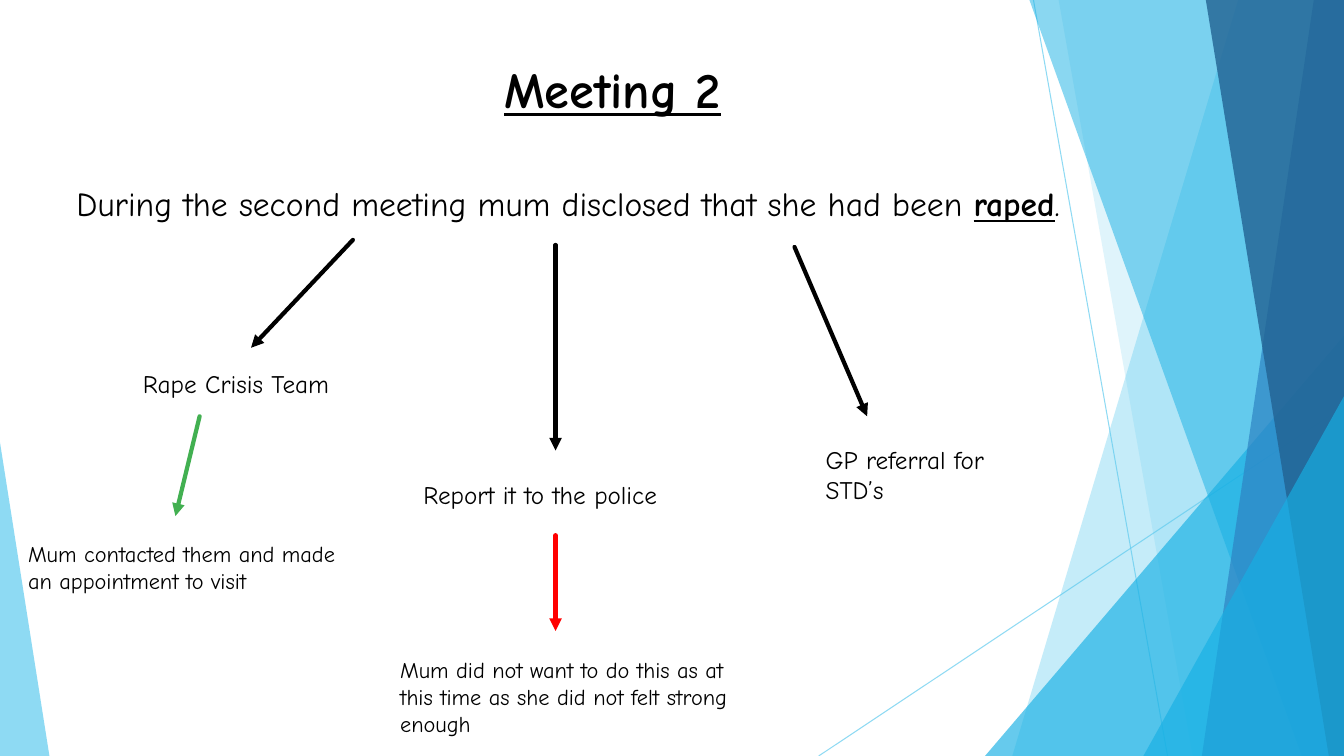
import pptx
import pptx.util
import pptx.dml.color
import pptx.enum.dml
import pptx.enum.shapes
import pptx.enum.text
import pptx.oxml
import pptx.oxml.ns
from dataclasses import dataclass

PX = 9144  # EMU in one px, 100 px to the inch
WIDTH, HEIGHT = 1333, 750


@dataclass(frozen=True)
class Theme:
    font: str = "Comic Neue"
    text: str = "000000"
    helped: str = "42B051"
    declined: str = "FF0000"
    sky: str = "5FCBEF"
    cyan: str = "17B0E4"
    blue: str = "2E83C3"
    navy: str = "226292"
    title_size: int = 36
    lead_size: int = 24
    label_size: int = 18
    outcome_size: int = 16
    arrow_width: float = 3
    hairline_width: float = 0.75


THEME = Theme()


def emu(*lengths):
    return [pptx.util.Emu(length * PX) for length in lengths]


def rgb(colour):
    return pptx.dml.color.RGBColor.from_string(colour)


def add_child(parent, tag, **attributes):
    child = pptx.oxml.parse_xml(f"<{tag} {pptx.oxml.ns.nsdecls('a')}/>")
    for name, value in attributes.items():
        child.set(name, value)
    parent.append(child)


def set_opacity(element, percent):
    for colour in element.iter(pptx.oxml.ns.qn("a:srgbClr")):
        add_child(colour, "a:alpha", val=str(percent * 1000))


def paint(shape, colour, opacity):
    shape.shadow.inherit = False
    shape.fill.solid()
    shape.fill.fore_color.rgb = rgb(colour)
    set_opacity(shape._element.spPr, opacity)
    shape.line.fill.background()


def add_line(shapes, start, end, colour, width):
    line = shapes.add_connector(
        pptx.enum.shapes.MSO_CONNECTOR.STRAIGHT, *emu(*start, *end))
    line.line.color.rgb = rgb(colour)
    line.line.width = pptx.util.Pt(width)
    add_child(line._element.spPr, "a:effectLst")
    return line


def add_arrow(slide, start, end, colour):
    arrow = add_line(slide.shapes, start, end, colour, THEME.arrow_width)
    outline = arrow.line._get_or_add_ln()
    outline.set("cap", "rnd")
    add_child(outline, "a:tailEnd", type="triangle")


def set_font(paragraph, size):
    paragraph.font.name = THEME.font
    paragraph.font.size = pptx.util.Pt(size)
    paragraph.font.color.rgb = rgb(THEME.text)


def add_text(slide, box, text, size):
    shape = slide.shapes.add_textbox(*emu(*box))
    shape.text_frame.word_wrap = True
    shape.text_frame.auto_size = pptx.enum.text.MSO_AUTO_SIZE.SHAPE_TO_FIT_TEXT
    paragraph = shape.text_frame.paragraphs[0]
    paragraph.text = text
    set_font(paragraph, size)
    return paragraph


def draw_backdrop(slide, box):
    """Overlapping translucent facets along the right edge and lower left corner."""
    left, top, width, height = box
    right, bottom = left + width, top + height
    shapes = slide.shapes.add_group_shape().shapes

    def add_facet(top_x, bottom_x, colour, opacity):
        builder = shapes.build_freeform(*emu(left + top_x, top))
        builder.add_line_segments([
            emu(right, top), emu(right, bottom), emu(left + bottom_x, bottom)])
        paint(builder.convert_to_shape(), colour, opacity)

    def add_corner(x, y, corner_width, apex, colour, opacity):
        triangle = shapes.add_shape(
            pptx.enum.shapes.MSO_SHAPE.ISOSCELES_TRIANGLE,
            *emu(left + x, top + y, corner_width, height - y))
        triangle.adjustments[0] = apex
        paint(triangle, colour, opacity)

    for start, end in (((1025, 0), (1158, height)), ((width, 403), (812, height))):
        line = add_line(shapes, (left + start[0], top + start[1]),
                        (left + end[0], top + end[1]), THEME.sky, THEME.hairline_width)
        set_opacity(line._element.spPr, 70)

    add_facet(1228, 1004, THEME.sky, 36)
    add_facet(1050, 1183, THEME.sky, 20)
    add_corner(977, 333, 356, 1, THEME.cyan, 66)
    add_facet(1021, 1291, THEME.cyan, 50)
    add_facet(1303, 1192, THEME.blue, 70)
    add_facet(1196, 1318, THEME.navy, 80)
    add_corner(1134, 393, 199, 1, THEME.cyan, 66)
    add_corner(0, 439, 49, 0, THEME.sky, 70)


def draw_title(slide, box, text):
    title = slide.shapes.title
    title.left, title.top, title.width, title.height = emu(*box)
    title.text_frame.text = text
    paragraph = title.text_frame.paragraphs[0]
    paragraph.alignment = pptx.enum.text.PP_ALIGN.CENTER
    set_font(paragraph, THEME.title_size)
    paragraph.font.bold = paragraph.font.underline = True


def draw_disclosure(slide, box):
    paragraph = add_text(
        slide, box, "During the second meeting mum disclosed that she had been ",
        THEME.lead_size)
    stressed = paragraph.add_run()
    stressed.text = "raped"
    stressed.font.bold = stressed.font.underline = True
    paragraph.add_run().text = "."


def draw_branch(slide, box, label, arrow, outcome=None):
    """Label with its incoming arrow and, if given, an outcome below it.

    Arrow ends and the outcome's box are measured from the label's corner.
    """
    left, top = box[:2]

    def place(point):
        return left + point[0], top + point[1]

    add_arrow(slide, place(arrow[0]), place(arrow[1]), THEME.text)
    add_text(slide, box, label, THEME.label_size)
    if outcome:
        text, (start, end), colour, (x, y, width, height) = outcome
        add_arrow(slide, place(start), place(end), colour)
        add_text(slide, (*place((x, y)), width, height), text, THEME.outcome_size)


def main():
    presentation = pptx.Presentation()
    presentation.slide_width, presentation.slide_height = emu(WIDTH, HEIGHT)
    slide = presentation.slides.add_slide(presentation.slide_layouts[5])

    draw_backdrop(slide, (0, 0, WIDTH, HEIGHT))
    draw_title(slide, (450, 52, 315, 71), "Meeting 2")
    draw_disclosure(slide, (66, 177, 1110, 50))
    draw_branch(
        slide, (132, 360, 234, 40), "Rape Crisis Team", ((218, -122), (117, -15)),
        ("Mum contacted them and made an appointment to visit",
         ((66, 53), (42, 152)), THEME.helped, (-114, 171, 348, 64)))
    draw_branch(
        slide, (410, 471, 348, 40), "Report it to the police", ((141, -228), (141, -24)),
        ("Mum did not want to do this as at this time as she did not felt strong enough",
         ((141, 60), (141, 155)), THEME.declined, (-23, 175, 348, 91)))
    draw_branch(
        slide, (809, 436, 178, 71), "GP referral for STD’s", ((-21, -191), (51, -23)))
    presentation.save("out.pptx")


if __name__ == "__main__":
    main()
